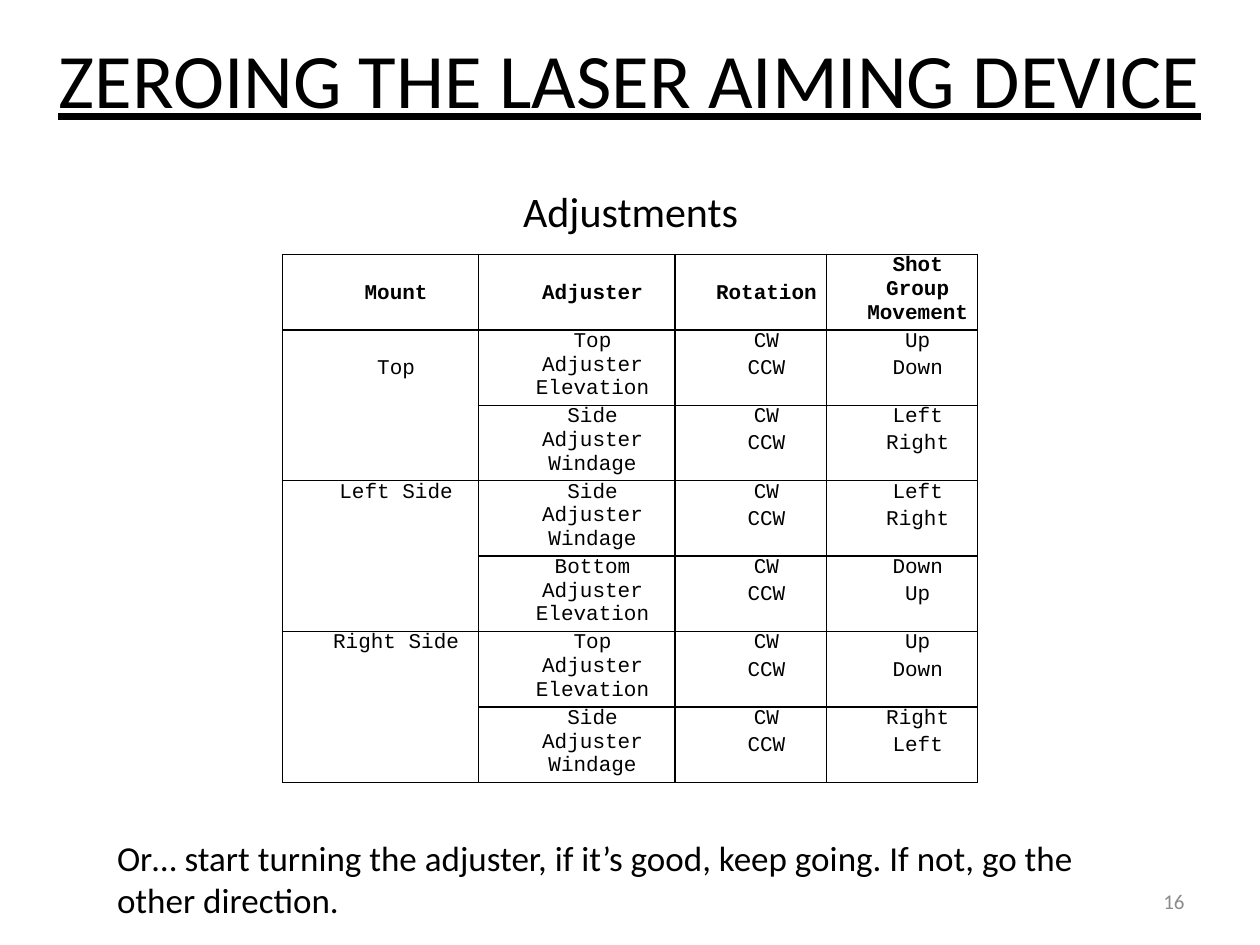
from pptx import Presentation
from pptx.dml.color import RGBColor
from pptx.enum.text import MSO_ANCHOR, MSO_AUTO_SIZE, PP_ALIGN
from pptx.oxml import parse_xml
from pptx.oxml.ns import nsdecls
from pptx.util import Cm, Pt

LEFT, MID, RIGHT = PP_ALIGN.LEFT, PP_ALIGN.CENTER, PP_ALIGN.RIGHT
TOP, CENTER = MSO_ANCHOR.TOP, MSO_ANCHOR.MIDDLE
NO_FIT = MSO_AUTO_SIZE.NONE
BLACK, GRAY = "000000", "8C8C8C"

# Content
TITLE = "ZEROING THE LASER AIMING DEVICE"
# text, (left, top, width, height) in cm, size, colour, alignment, anchor
NOTES = [
    ("Adjustments", (2.34, 3.61, 20.75, 1.27), 24, BLACK, MID, TOP),
    ("Or… start turning the adjuster, if it’s good, keep going. "
     "If not, go the other direction.",
     (2.11, 16.74, 20.96, 1.96), 20, BLACK, LEFT, TOP),
    ("16", (18.21, 17.65, 5.92, 1.02), 12, GRAY, RIGHT, CENTER),
]
HEAD = ["Mount", "Adjuster", "Rotation", "Shot Group Movement"]
TURNS = "CW\nCCW"
# mount, then (adjuster, shot movement for CW and CCW)
MOUNTS = [
    ("Top", [("Top Adjuster Elevation", "Up\nDown"),
             ("Side Adjuster Windage", "Left\nRight")]),
    ("Left Side", [("Side Adjuster Windage", "Left\nRight"),
                   ("Bottom Adjuster Elevation", "Down\nUp")]),
    ("Right Side", [("Top Adjuster Elevation", "Up\nDown"),
                    ("Side Adjuster Windage", "Right\nLeft")]),
]
COLS = [3.96, 3.96, 3.05, 3.05]
ROW = 1.52
DROP = 0.55  # one line down inside a cell
LOWERED = {(0, 0), (0, 1), (0, 2), (1, 0)}


def color(text):
    return RGBColor.from_string(text)


def style(par, size, tint=BLACK, align=MID, face="Calibri"):
    par.alignment = align
    par.font.size = Pt(size)
    par.font.name = face
    par.font.color.rgb = color(tint)


def place(shape, box):
    shape.left, shape.top, shape.width, shape.height = map(Cm, box)


def border(cell):
    props = cell._tc.get_or_add_tcPr()
    for i, side in enumerate("LRTB"):
        props.insert(i, parse_xml(
            f'<a:ln{side} {nsdecls("a")} w="12700"><a:solidFill>'
            f'<a:srgbClr val="{BLACK}"/></a:solidFill></a:ln{side}>'))


def fill_cell(cell, text, bold, drop):
    cell.fill.background()
    border(cell)
    cell.margin_left = cell.margin_right = Cm(0.18)
    cell.margin_top, cell.margin_bottom = Cm(drop), 0
    cell.vertical_anchor = TOP
    cell.text = text
    for par in cell.text_frame.paragraphs:
        style(par, 12, face="Courier New")
        par.font.bold = bold
        par.space_before = par.space_after = Pt(1)
        props = par._p.get_or_add_pPr()
        props.set("marL", str(Cm(0.63)))
        props.set("indent", "0")


deck = Presentation()
deck.slide_width, deck.slide_height = Cm(25.4), Cm(19.05)
slide = deck.slides.add_slide(deck.slide_layouts[5])

# Title
title = slide.shapes.title
place(title, (0, 0.2, 25.4, 2.74))
frame = title.text_frame
frame.text = TITLE
frame.auto_size = NO_FIT
frame.vertical_anchor = CENTER
style(frame.paragraphs[0], 44)
frame.paragraphs[0].font.underline = True

# Adjustment table
rows = [HEAD]
for mount, steps in MOUNTS:
    for i, (part, shift) in enumerate(steps):
        rows.append(["" if i else mount, part, TURNS, shift])
grid = slide.shapes.add_table(
    len(rows), len(COLS), Cm(5.69), Cm(5.13),
    Cm(sum(COLS)), Cm(ROW * len(rows))).table
grid.first_row = grid.horz_banding = False
for col, width in zip(grid.columns, COLS):
    col.width = Cm(width)
for r, row in enumerate(rows):
    grid.rows[r].height = Cm(ROW)
    for c, text in enumerate(row):
        drop = DROP if (r, c) in LOWERED else 0
        fill_cell(grid.cell(r, c), text, r == 0, drop)
for r in range(1, len(rows), 2):
    grid.cell(r, 0).merge(grid.cell(r + 1, 0))

# Captions and page number
for text, box, size, tint, align, anchor in NOTES:
    frame = slide.shapes.add_textbox(*map(Cm, box)).text_frame
    frame.word_wrap = True
    frame.vertical_anchor = anchor
    frame.text = text
    style(frame.paragraphs[0], size, tint, align)

deck.save("out.pptx")
